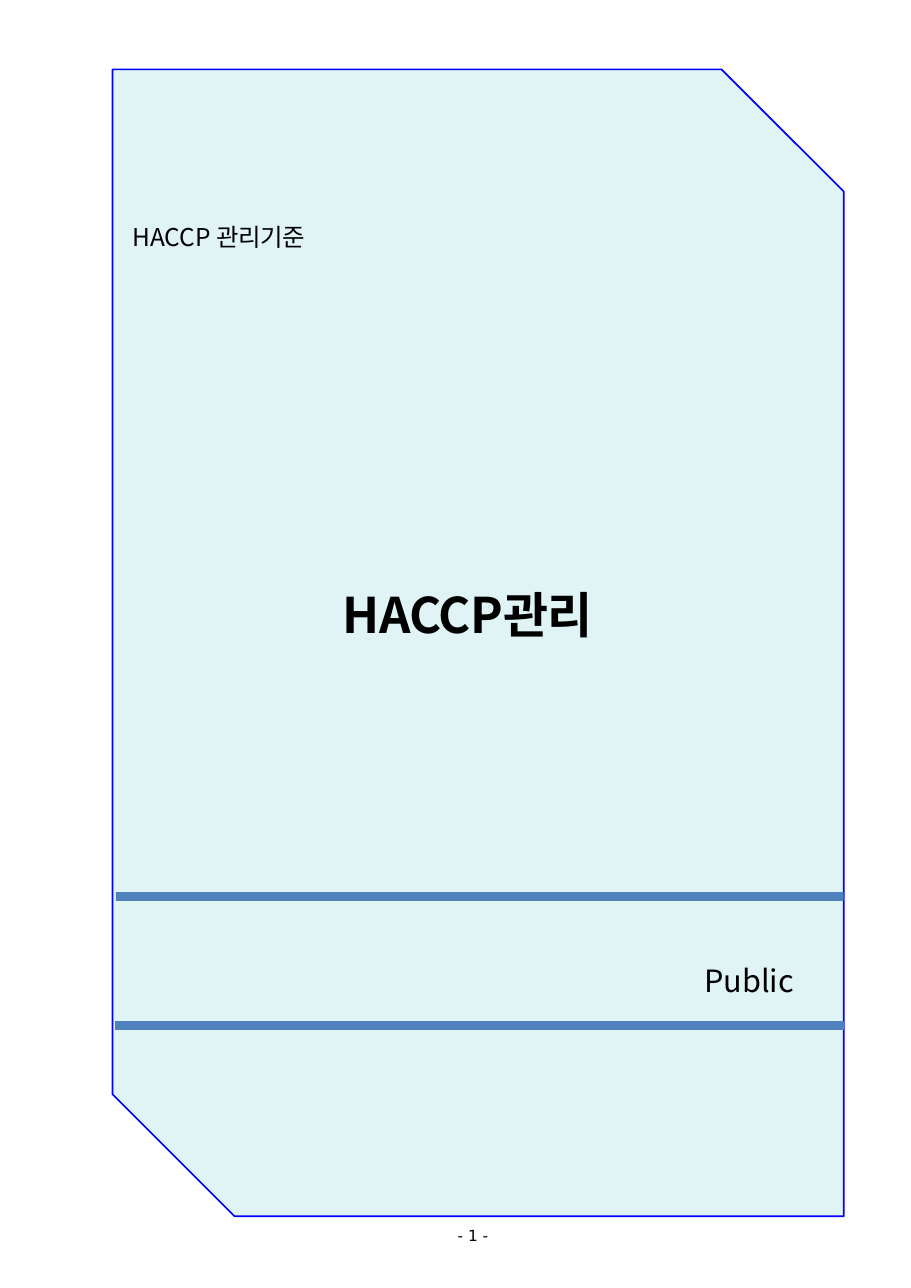
from lxml import etree
from pptx import Presentation
from pptx.dml import color
from pptx.enum import shapes, text
from pptx.oxml import ns
from pptx.util import Pt

PX = 9144
PAGE = (826, 1168)
CARD = (102, 63, 663, 1040)
SNIP = 0.167
BARS = [((105, 809, 660, 8), False), ((105, 926, 660, 8), True)]
SANS, KOREAN = "DejaVu Sans", "Noto Sans CJK KR"
TITLE = ((310, 529, 245, 54), [("HACCP관리", -50)], KOREAN, 32, True)
LABELS = [
    ((414, 1111, 37, 19), [("- 1 ", 0), ("-", -50)], SANS, 10, False),
    ((119, 200, 180, 29), [("HACCP ", 0), ("관리기준", -20)], KOREAN, 16, False),
    ((638, 871, 83, 36), [("Public", -10)], KOREAN, 20, False),
]


def rgb(value):
    return color.RGBColor.from_string(value)


def px(lengths):
    return [length * PX for length in lengths]


def paint(part, fill, line=None, weight=0.75):
    part.shadow.inherit = False
    part.fill.solid()
    part.fill.fore_color.rgb = rgb(fill)
    if line:
        part.line.color.rgb = rgb(line)
        part.line.width = Pt(weight)
    else:
        part.line.fill.background()


def write(box, place, pieces, face, size, bold):
    box.left, box.top, box.width, box.height = px(place)
    frame = box.text_frame
    frame.margin_left = frame.margin_top = PX
    frame.margin_right = frame.margin_bottom = 0
    frame.word_wrap = False
    frame.auto_size = text.MSO_AUTO_SIZE.NONE
    frame.vertical_anchor = text.MSO_ANCHOR.TOP
    line = frame.paragraphs[0]
    line.alignment = text.PP_ALIGN.LEFT
    for words, spacing in pieces:
        run = line.add_run()
        run.text = words
        run.font.name = face
        run.font.size = Pt(size)
        run.font.bold = bold
        run.font.color.rgb = rgb("000000")
        props = run.font._element
        props.set("spc", str(spacing))
        latin = props.find(ns.qn("a:latin"))
        east = etree.Element(ns.qn("a:ea"), typeface=face)
        latin.addnext(east)


deck = Presentation()
deck.slide_width, deck.slide_height = px(PAGE)
cover = deck.slides.add_slide(deck.slide_layouts[5])
title = cover.shapes.title

card = cover.shapes.add_shape(shapes.MSO_SHAPE.SNIP_2_DIAG_RECTANGLE, *px(CARD))
card.adjustments[0] = 0
card.adjustments[1] = SNIP
paint(card, "E0F4F6", "0000FF", 1.08)
title.element.addprevious(card.element)

write(title, *TITLE)
for place, *content in LABELS:
    write(cover.shapes.add_textbox(*px(place)), place, *content)

for place, outlined in BARS:
    bar = cover.shapes.add_shape(shapes.MSO_SHAPE.RECTANGLE, *px(place))
    paint(bar, "4F81BD", "4F81BD" if outlined else None)

deck.save("out.pptx")
